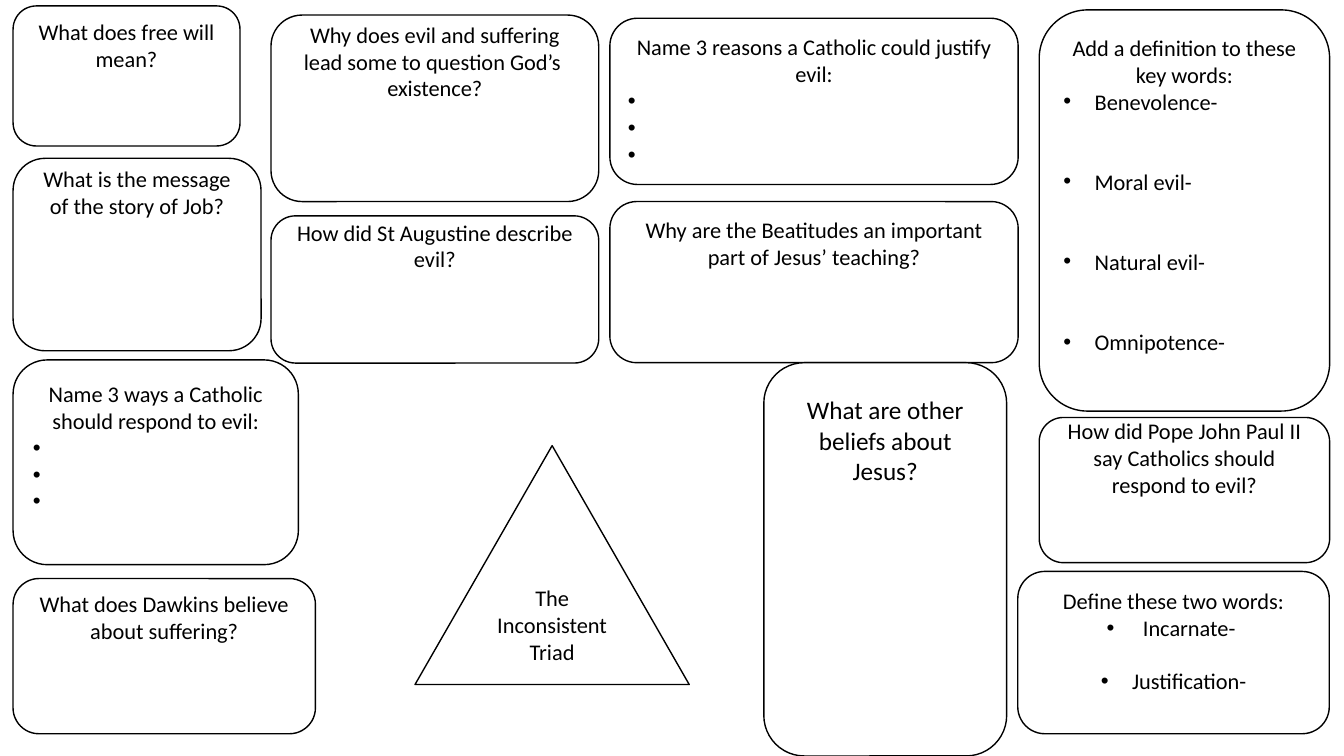
from dataclasses import dataclass

from lxml.etree import SubElement
from pptx import Presentation
from pptx.dml.color import RGBColor
from pptx.enum.shapes import MSO_SHAPE
from pptx.enum.text import MSO_ANCHOR, PP_ALIGN
from pptx.oxml.ns import qn
from pptx.util import Cm, Pt


@dataclass(frozen=True)
class Theme:
    font: str = "Calibri"
    ink: RGBColor = RGBColor(0, 0, 0)
    paper: RGBColor = RGBColor(255, 255, 255)
    body: int = 16
    large: int = 18
    outline: int = 1


THEME = Theme()

# Left edges of the columns, in cm
FIRST, SECOND, THIRD, FOURTH = 0.33, 6.83, 15.37, 26.19
BLANK_POINTS = [" "] * 3

# Left, top, width, height, vertical centre of the text, prompt lines
QUESTIONS = [
    (FIRST, 0.15, 5.72, 3.53, 1.14, ["What does free will mean?"]),
    (FIRST, 3.99, 6.25, 4.85, 4.85, ["What is the message of the story of Job?"]),
    (FIRST, 14.58, 7.62, 3.91, 15.56, ["What does Dawkins believe about suffering?"]),
    (SECOND, 0.38, 8.26, 4.7, 1.54,
     ["Why does evil and suffering lead some to question God’s ", "existence?"]),
    (SECOND, 5.44, 8.26, 3.71, 6.19, ["How did St Augustine describe evil?"]),
    (THIRD, 5.08, 10.29, 4.06, 6.12,
     ["Why are the Beatitudes an important part of Jesus’ teaching?"]),
    (FOURTH, 10.52, 7.32, 3.66, 11.53,
     ["How did Pope John Paul II say Catholics should respond to evil?"]),
]


def add_bullet(para):
    """Give the paragraph a hanging round bullet."""
    properties = para._p.get_or_add_pPr()
    properties.set("marL", str(Cm(0.79)))
    properties.set("indent", str(-Cm(0.79)))
    SubElement(properties, qn("a:buFont")).set("typeface", "Arial")
    SubElement(properties, qn("a:buChar")).set("char", "•")


def write_line(frame, text, *, size=THEME.body, align=PP_ALIGN.CENTER,
               bullet=False, gap=0):
    """Add one paragraph, using the frame's first one while it is empty."""
    first = frame.paragraphs[0]
    para = frame.add_paragraph() if first.runs else first
    para.alignment = align
    para.space_before = Pt(gap)
    if bullet:
        add_bullet(para)
    span = para.add_run()
    span.text = text
    span.font.name = THEME.font
    span.font.size = Pt(size)
    span.font.color.rgb = THEME.ink


def add_outline(page, kind, left, top, width, height):
    """Draw a white shape with a thin black outline and return its text frame."""
    box = page.shapes.add_shape(kind, Cm(left), Cm(top), Cm(width), Cm(height))
    box.shadow.inherit = False
    box.fill.solid()
    box.fill.fore_color.rgb = THEME.paper
    box.line.color.rgb = THEME.ink
    box.line.width = Pt(THEME.outline)
    frame = box.text_frame
    frame.word_wrap = True
    frame.vertical_anchor = MSO_ANCHOR.MIDDLE
    return frame


def add_card(page, left, top, width, height, centre, prompts, *, size=THEME.body,
             points=(), point_align=PP_ALIGN.LEFT, point_gap=0):
    """Add a rounded card whose text is centred on the given height."""
    frame = add_outline(page, MSO_SHAPE.ROUNDED_RECTANGLE, left, top, width, height)
    frame.margin_top = 0
    frame.margin_bottom = Cm(height - 2 * (centre - top))
    for prompt in prompts:
        write_line(frame, prompt, size=size)
    for index, point in enumerate(points):
        write_line(frame, point, align=point_align, bullet=True,
                   gap=point_gap if index else 0)


def main():
    deck = Presentation()
    deck.slide_width, deck.slide_height = Cm(33.87), Cm(19.05)
    page = deck.slides.add_slide(deck.slide_layouts[6])

    # Plain question cards
    for question in QUESTIONS:
        add_card(page, *question)
    add_card(page, 19.25, 9.14, 6.12, 9.91, 11.09,
             ["What are other beliefs about Jesus?"], size=THEME.large)

    # Cards with three points to fill in
    add_card(page, FIRST, 9.07, 7.19, 5.16, 11.28,
             ["Name 3 ways a Catholic should respond to evil:"], points=BLANK_POINTS)
    add_card(page, THIRD, 0.46, 10.29, 4.19, 2.54,
             ["Name 3 reasons a Catholic could justify evil:"], points=BLANK_POINTS)

    # Cards with words to define
    add_card(page, FOURTH, 0.25, 7.32, 10.11, 4.9,
             ["Add a definition to these key words:"],
             points=["Benevolence-", "Moral evil-", "Natural evil-", "Omnipotence-"],
             point_gap=38)
    add_card(page, 25.65, 14.4, 7.85, 4.09, 16.15, ["Define these two words:"],
             points=[" Incarnate- ", "Justification-"],
             point_align=PP_ALIGN.CENTER, point_gap=19)

    # Triangle of the triad
    triad = add_outline(page, MSO_SHAPE.ISOSCELES_TRIANGLE, 10.46, 11.23, 6.91, 6.02)
    write_line(triad, "The Inconsistent Triad")

    deck.save("out.pptx")


if __name__ == "__main__":
    main()
